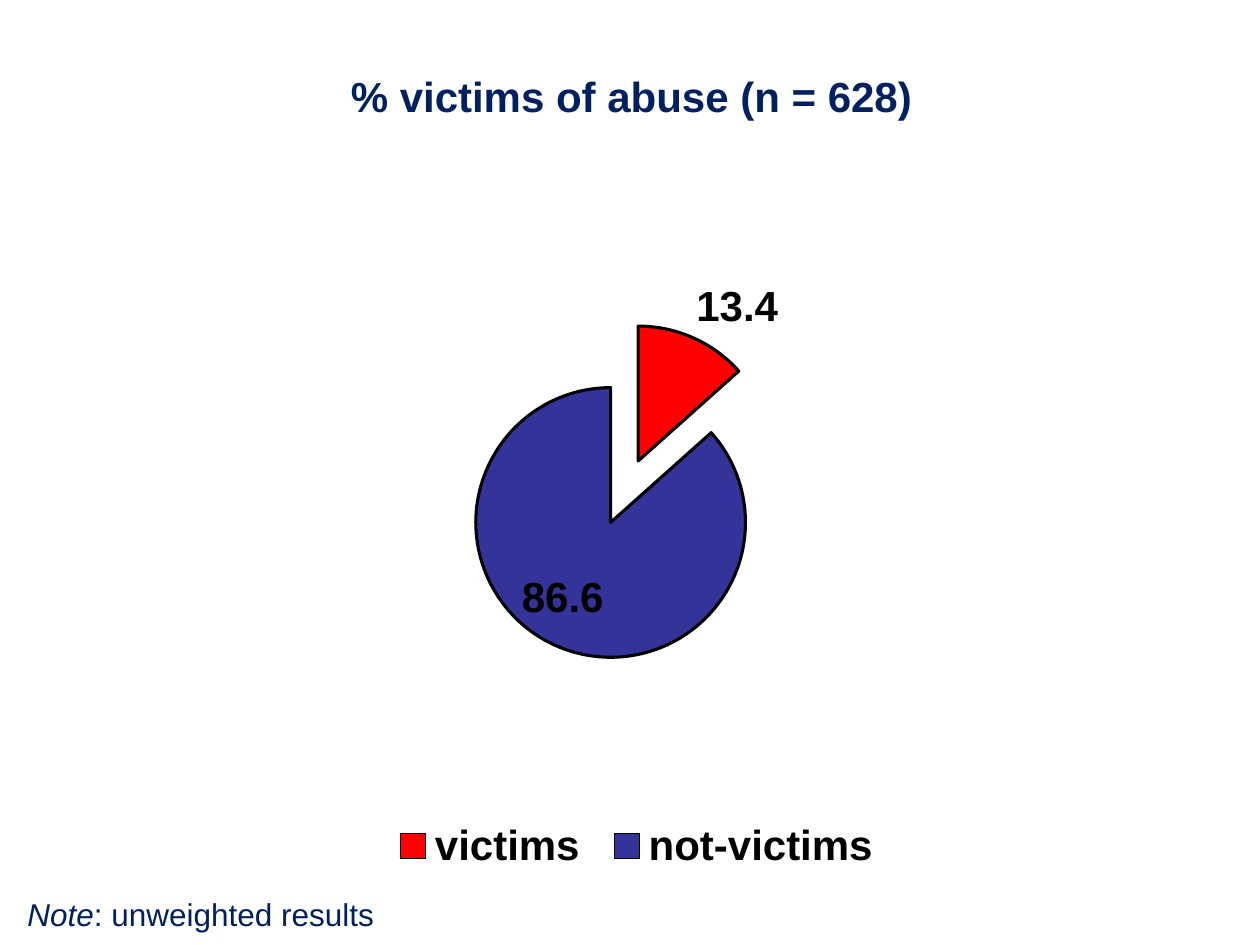
from lxml import etree
from pptx import Presentation
from pptx.chart.data import CategoryChartData
from pptx.dml.color import RGBColor
from pptx.enum.chart import XL_CHART_TYPE, XL_LABEL_POSITION, XL_LEGEND_POSITION
from pptx.enum.text import MSO_AUTO_SIZE
from pptx.oxml.ns import qn
from pptx.util import Emu, Pt

PIE = XL_CHART_TYPE.PIE
OUTSIDE, INSIDE = XL_LABEL_POSITION.OUTSIDE_END, XL_LABEL_POSITION.INSIDE_END
BOTTOM = XL_LEGEND_POSITION.BOTTOM
FIT_SHAPE = MSO_AUTO_SIZE.SHAPE_TO_FIT_TEXT

# Content
TITLE = "% victims of abuse (n = 628)"
SLICES = [  # category, value, colour, label position, label shift
    ("victims", 13.4, "FF0000", OUTSIDE, None),
    ("not-victims", 86.6, "333399", INSIDE, {"x": -0.03, "y": -0.02}),
]
NOTE = [("Note", True), (": unweighted results", False)]

# Places in px, and parts of the chart as fractions of it
SLIDE = (1260, 945)
CHART = (13, 45, 1223, 843)
NOTE_BOX = (15, 896, 735, 43)
EDGE = {"xMode": "edge", "yMode": "edge"}
TITLE_PLACE = {**EDGE, "x": 0.27, "y": 0.02}
PLOT_PLACE = {"layoutTarget": "inner", **EDGE, "x": 0.21, "y": 0.33, "w": 0.58, "h": 0.4}
LEGEND_PLACE = {**EDGE, "x": 0.3, "y": 0.92, "w": 0.42, "h": 0.06}

# Formats
NAVY, BLACK = "002060", "000000"
CHART_TEXT = {"name": "Arial", "size": Pt(24), "bold": True}
NOTE_TEXT = {"name": "Arial", "size": Pt(18)}


def px(length):
    return Emu(round(length * 914400 / 126))


def color(hex_value):
    return RGBColor.from_string(hex_value)


def style(font, values, hex_value):
    for name, value in values.items():
        setattr(font, name, value)
    font.color.rgb = color(hex_value)


def place(parent, settings, previous=None):
    """Give a chart part a manual layout, after the named child or first."""
    for old in parent.findall(qn("c:layout")):
        parent.remove(old)
    layout = etree.Element(qn("c:layout"))
    if previous:
        parent.find(qn(previous)).addnext(layout)
    else:
        parent.insert(0, layout)
    manual = etree.SubElement(layout, qn("c:manualLayout"))
    for name, value in settings.items():
        etree.SubElement(manual, qn("c:" + name)).set("val", str(value))


deck = Presentation()
deck.slide_width, deck.slide_height = map(px, SLIDE)
page = deck.slides.add_slide(deck.slide_layouts[6])

# Pie chart
data = CategoryChartData(number_format="0.0")
data.categories = [name for name, *_ in SLICES]
data.add_series("Series 1", [value for _, value, *_ in SLICES])
chart = page.shapes.add_chart(PIE, *map(px, CHART), data).chart
style(chart.font, {"name": "Arial", "size": Pt(17)}, BLACK)
plot = chart.plots[0]
plot.vary_by_categories = True

# Chart title and legend
chart.has_title = True
title = chart.chart_title
title.include_in_layout = False
title.text_frame.text = TITLE
style(title.text_frame.paragraphs[0].runs[0].font, CHART_TEXT, NAVY)
chart.has_legend = True
chart.legend.position = BOTTOM
chart.legend.include_in_layout = False
style(chart.legend.font, CHART_TEXT, BLACK)

# Slices and their values
series = plot.series[0]
series_xml = series._element
for index, (_, _, fill, position, shift) in enumerate(SLICES):
    point = series.points[index]
    point.format.fill.solid()
    point.format.fill.fore_color.rgb = color(fill)
    point.format.line.color.rgb = color(BLACK)
    point.format.line.width = Pt(1.75)
    style(point.data_label.font, CHART_TEXT, BLACK)
    point.data_label.position = position
    if shift:
        label_xml = series_xml.find(qn("c:dLbls")).findall(qn("c:dLbl"))[index]
        place(label_xml, shift, "c:idx")

# Pull all slices apart
explosion = etree.Element(qn("c:explosion"))
explosion.set("val", "25")
series_xml.find(qn("c:dPt")).addprevious(explosion)

# Manual positions inside the chart
chart_xml = chart._chartSpace.chart
place(chart_xml.find(qn("c:title")), TITLE_PLACE, "c:tx")
place(chart_xml.plotArea, PLOT_PLACE)
place(chart.legend._element, LEGEND_PLACE, "c:legendPos")

# Note
box = page.shapes.add_textbox(*map(px, NOTE_BOX))
box.text_frame.word_wrap = True
box.text_frame.auto_size = FIT_SHAPE
para = box.text_frame.paragraphs[0]
para.line_spacing = 0.8
for text, italic in NOTE:
    span = para.add_run()
    span.text = text
    style(span.font, {**NOTE_TEXT, "italic": italic}, NAVY)

deck.save("out.pptx")
